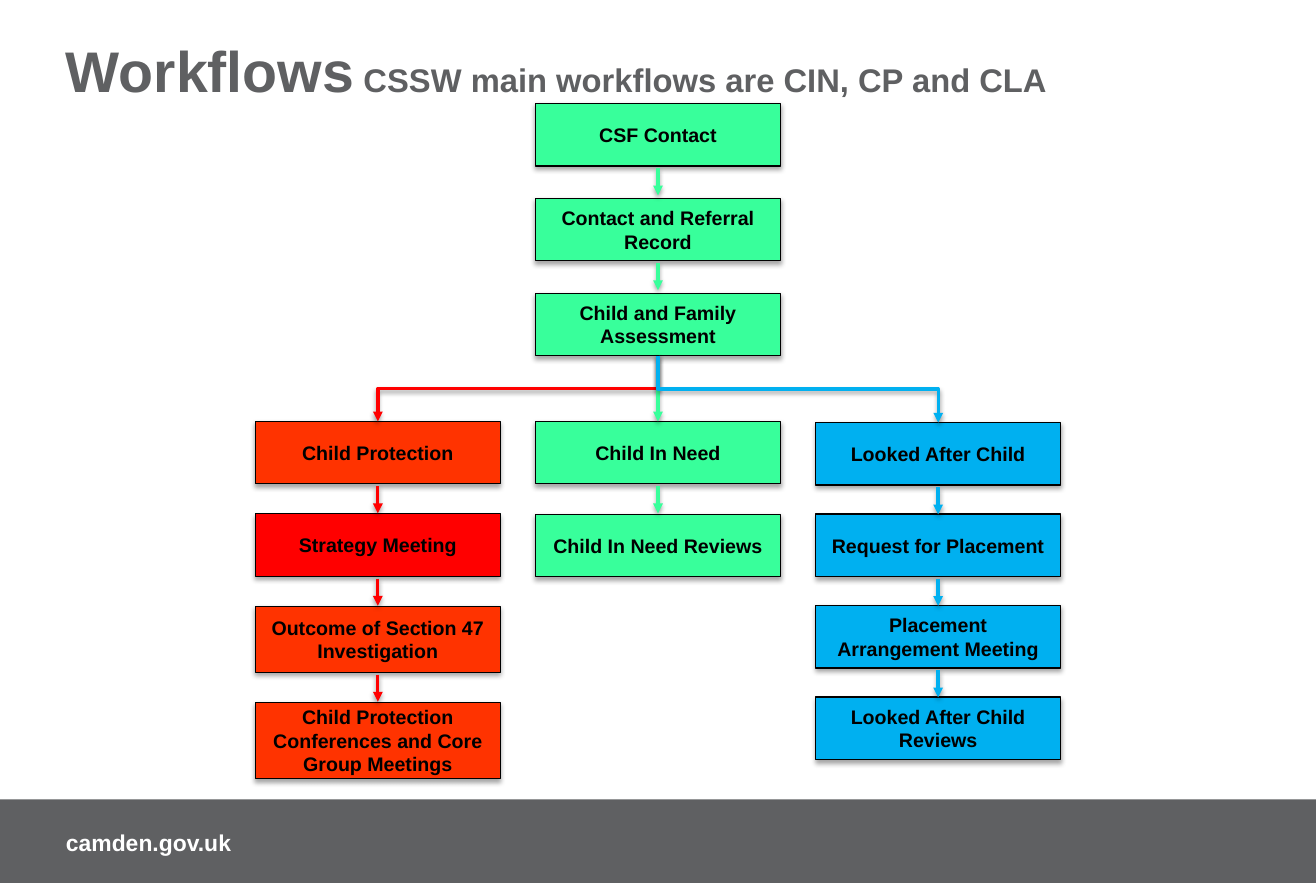
from lxml.etree import SubElement
from pptx import Presentation
from pptx.dml.color import RGBColor
from pptx.enum.shapes import MSO_CONNECTOR, MSO_SHAPE
from pptx.enum.text import MSO_ANCHOR, PP_ALIGN
from pptx.oxml.ns import qn
from pptx.util import Inches, Pt

COLORS = {
    "grey": "5F6062", "white": "FFFFFF", "black": "000000", "green": "38FF9B",
    "orange": "FF3300", "red": "FF0000", "blue": "00B0F0",
}
TITLE = [("Workflows", 35), (" CSSW main workflows are CIN, CP and CLA", 20)]
FOOTER = "camden.gov.uk"

# Each chain: column, top, gap, arrow colour, steps of (text, fill, height)
STEP_HEIGHT = 0.53
CHAINS = {
    "intake": (1, 0.88, 0.275, "green", [
        ("CSF Contact", "green", STEP_HEIGHT),
        ("Contact and Referral Record", "green", STEP_HEIGHT),
        ("Child and Family Assessment", "green", STEP_HEIGHT),
    ]),
    "protection": (0, 3.58, 0.255, "red", [
        ("Child Protection", "orange", STEP_HEIGHT),
        ("Strategy Meeting", "red", STEP_HEIGHT),
        ("Outcome of Section 47 Investigation", "orange", 0.56),
        ("Child Protection Conferences and Core Group Meetings", "orange", 0.65),
    ]),
    "need": (1, 3.58, 0.26, "green", [
        ("Child In Need", "green", STEP_HEIGHT),
        ("Child In Need Reviews", "green", STEP_HEIGHT),
    ]),
    "looked_after": (2, 3.59, 0.247, "blue", [
        ("Looked After Child", "blue", STEP_HEIGHT),
        ("Request for Placement", "blue", STEP_HEIGHT),
        ("Placement Arrangement Meeting", "blue", STEP_HEIGHT),
        ("Looked After Child Reviews", "blue", STEP_HEIGHT),
    ]),
}
BRANCHES = ["protection", "need", "looked_after"]

SLIDE_W, SLIDE_H = 11.18, 7.5
MARGIN = 0.56
FOOTER_TOP = 6.79
FIRST_COLUMN, COLUMN_PITCH, STEP_WIDTH = 2.17, 2.38, 2.08
ARROW_OFFSET, ARROW_LENGTH = 0.02, 0.23


def color(name):
    return RGBColor.from_string(COLORS[name])


def style_font(font, size, name):
    font.name, font.size, font.bold = "Arial", Pt(size), True
    font.color.rgb = color(name)


def add_shadow(shape, distance, opacity):
    effects = SubElement(shape._element.spPr, qn("a:effectLst"))
    outer = SubElement(effects, qn("a:outerShdw"), blurRad=str(Pt(3.1)),
                       dist=str(Pt(distance)), dir="5400000", rotWithShape="0")
    black = SubElement(outer, qn("a:srgbClr"), val=COLORS["black"])
    SubElement(black, qn("a:alpha"), val=str(opacity * 1000))


def add_text_box(page, top, width, height):
    box = page.shapes.add_textbox(Inches(MARGIN), Inches(top), Inches(width), Inches(height))
    frame = box.text_frame
    frame.word_wrap = True
    frame.margin_left = frame.margin_top = frame.margin_right = frame.margin_bottom = 0
    return frame.paragraphs[0]


def add_step(page, left, top, text, fill, height):
    step = page.shapes.add_shape(MSO_SHAPE.FLOWCHART_PROCESS, Inches(left), Inches(top),
                                 Inches(STEP_WIDTH), Inches(height))
    step.fill.solid()
    step.fill.fore_color.rgb = color(fill)
    step.line.color.rgb = color("black")
    step.line.width = Pt(0.75)
    add_shadow(step, 1.8, 35)
    step.text_frame.word_wrap = True
    step.text_frame.vertical_anchor = MSO_ANCHOR.MIDDLE
    para = step.text_frame.paragraphs[0]
    para.text = text
    para.alignment = PP_ALIGN.CENTER
    style_font(para.font, 12, "black")


def add_arrow(page, kind, ends, name):
    arrow = page.shapes.add_connector(kind, *[Inches(value) for value in ends])
    arrow.line.color.rgb = color(name)
    arrow.line.width = Pt(2)
    SubElement(arrow.line._get_or_add_ln(), qn("a:tailEnd"), type="triangle")
    add_shadow(arrow, 1.6, 38)
    return arrow


def add_branch(page, start_x, start_y, end_x, end_y, name):
    """Join two points by an arrow that leaves and arrives vertically."""
    if start_x == end_x:
        add_arrow(page, MSO_CONNECTOR.STRAIGHT, (start_x, start_y, end_x, end_y), name)
        return
    # An elbow runs sideways first, so it is laid out turned and then rotated.
    side = 1 if end_x > start_x else -1
    middle_x, middle_y = (start_x + end_x) / 2, (start_y + end_y) / 2
    half_drop, half_span = (end_y - start_y) / 2, abs(end_x - start_x) / 2
    ends = (middle_x + side * half_drop, middle_y - half_span,
            middle_x - side * half_drop, middle_y + half_span)
    elbow = add_arrow(page, MSO_CONNECTOR.ELBOW, ends, name)
    degrees = 270 if side > 0 else 90
    elbow._element.spPr.find(qn("a:xfrm")).set("rot", str(degrees * 60000))


def column_left(column):
    return FIRST_COLUMN + column * COLUMN_PITCH


def column_center(column):
    return column_left(column) + STEP_WIDTH / 2


def step_tops(top, gap, steps):
    tops = []
    for _, _, height in steps:
        tops.append(top)
        top += height + gap
    return tops


def main():
    deck = Presentation()
    deck.slide_width, deck.slide_height = Inches(SLIDE_W), Inches(SLIDE_H)
    page = deck.slides.add_slide(deck.slide_layouts[6])

    band = page.shapes.add_shape(MSO_SHAPE.RECTANGLE, 0, Inches(FOOTER_TOP),
                                 Inches(SLIDE_W), Inches(SLIDE_H - FOOTER_TOP))
    band.shadow.inherit = False
    band.fill.solid()
    band.fill.fore_color.rgb = color("grey")
    band.line.fill.background()
    footer = add_text_box(page, 7.04, 4.61, 0.24)
    footer.text = FOOTER
    style_font(footer.font, 14, "white")

    title = add_text_box(page, 0.3, SLIDE_W - 2 * MARGIN, 1.25)
    for text, size in TITLE:
        span = title.add_run()
        span.text = text
        style_font(span.font, size, "grey")

    arrows = []
    for column, top, gap, name, steps in CHAINS.values():
        tops = step_tops(top, gap, steps)
        for step_top, step in zip(tops, steps):
            add_step(page, column_left(column), step_top, *step)
        center = column_center(column)
        for next_top in tops[1:]:
            start = next_top - gap + ARROW_OFFSET
            arrows.append(((center, start, center, start + ARROW_LENGTH), name))
    for ends, name in arrows:
        add_arrow(page, MSO_CONNECTOR.STRAIGHT, ends, name)

    column, top, gap, _, steps = CHAINS["intake"]
    fork_x = column_center(column)
    fork_y = step_tops(top, gap, steps)[-1] + STEP_HEIGHT
    for branch in BRANCHES:
        column, top, _, name, _ = CHAINS[branch]
        add_branch(page, fork_x, fork_y, column_center(column), top, name)

    deck.save("out.pptx")


if __name__ == "__main__":
    main()
